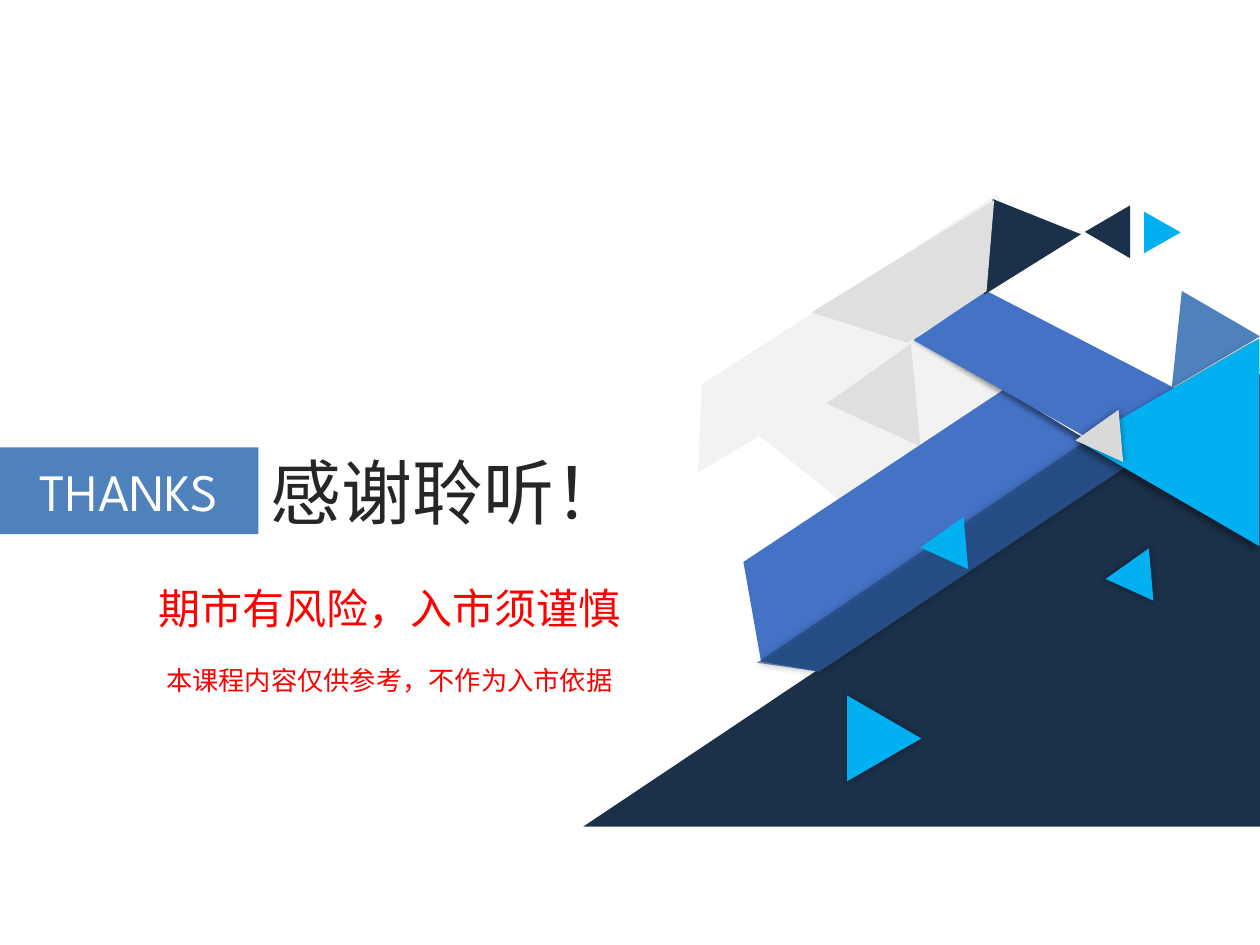
from lxml import etree
from pptx import Presentation
from pptx.dml.color import RGBColor
from pptx.enum.shapes import MSO_SHAPE
from pptx.enum.text import MSO_ANCHOR, MSO_AUTO_SIZE, PP_ALIGN
from pptx.oxml.ns import qn
from pptx.util import Inches, Pt

TRIANGLE = MSO_SHAPE.ISOSCELES_TRIANGLE
RIGHT_TRIANGLE = MSO_SHAPE.RIGHT_TRIANGLE
RECTANGLE = MSO_SHAPE.RECTANGLE
LEFT, CENTER = PP_ALIGN.LEFT, PP_ALIGN.CENTER
MIDDLE, TOP = MSO_ANCHOR.MIDDLE, MSO_ANCHOR.TOP
NO_FIT = MSO_AUTO_SIZE.NONE

LATIN_FONT = "League Spartan"
CHINESE_FONT = "Noto Sans CJK SC"
TILT = 144.7
SMALL = (0.42, 0.36)
SOFT = {"blur": 4, "distance": 0, "angle": 50}
COLORS = {
    "white": "FFFFFF", "pale": "F2F2F2", "silver": "DFDFDF", "gray": "D9D9D9",
    "navy": "1B3049", "cyan": "00B0F0", "blue": "4472C4", "steel": "4F81BD",
    "deep": "1F497D", "ink": "262626", "red": "FF0000", "black": "000000",
}


def add_alpha(color_element, percent):
    """Make a colour element partly transparent."""
    etree.SubElement(color_element, qn("a:alpha")).set("val", str(percent * 1000))


def add_shadow(shape, blur, distance, angle):
    """Give the shape an outer shadow, 40 percent black."""
    effects = shape._element.spPr.find(qn("a:effectLst"))
    shadow = etree.SubElement(effects, qn("a:outerShdw"))
    shadow.set("blurRad", str(Pt(blur)))
    shadow.set("dist", str(Pt(distance)))
    shadow.set("dir", str(angle * 60000))
    shadow.set("rotWithShape", "0")
    color = etree.SubElement(shadow, qn("a:srgbClr"))
    color.set("val", COLORS["black"])
    add_alpha(color, 40)


def paint(shape, color, opacity=100, shadow=None):
    """Set the fill, opacity and shadow of a shape without outline."""
    shape.shadow.inherit = False
    shape.fill.solid()
    shape.fill.fore_color.rgb = RGBColor.from_string(COLORS[color])
    shape.line.fill.background()
    if opacity < 100:
        add_alpha(shape._element.spPr.find(".//" + qn("a:srgbClr")), opacity)
    if shadow:
        add_shadow(shape, **shadow)


def add_preset(page, kind, left, top, size, color, rotation=0, **style):
    """Add a painted preset shape."""
    shape = page.shapes.add_shape(kind, Inches(left), Inches(top), *map(Inches, size))
    shape.rotation = rotation
    paint(shape, color, **style)
    return shape


def add_polygon(page, points, color, **style):
    """Add a painted polygon through points given in inches."""
    corners = [(Inches(x), Inches(y)) for x, y in points]
    builder = page.shapes.build_freeform(*corners[0])
    builder.add_line_segments(corners[1:], close=True)
    paint(builder.convert_to_shape(), color, **style)


def write(para, text, size, color, font=LATIN_FONT, align=LEFT, before=0):
    """Write one formatted paragraph."""
    para.alignment = align
    if before:
        para.space_before = Pt(before)
    span = para.add_run()
    span.text = text
    span.font.size = Pt(size)
    span.font.name = font
    span.font.color.rgb = RGBColor.from_string(COLORS[color])
    east_asian = etree.SubElement(span.font._element, qn("a:ea"))
    east_asian.set("typeface", CHINESE_FONT)


def add_artwork(page):
    """Add the folded ribbons and triangles from back to front."""
    add_polygon(page, [(6.73, 4.02), (6.03, 3.46), (5.54, 3.75), (5.57, 3.05),
                       (7.92, 1.54), (8.55, 2.8)], "pale")
    add_preset(page, TRIANGLE, 6.69, 2.9, (0.82, 0.71), "gray", TILT, opacity=73)
    ground = add_preset(page, RIGHT_TRIANGLE, 4.63, 2.97, (5.37, 3.59), "navy")
    ground._element.spPr.find(qn("a:xfrm")).set("flipH", "1")
    add_preset(page, TRIANGLE, 6.53, 5.48, (0.68, 0.59), "cyan", 330, shadow=SOFT)
    add_preset(page, TRIANGLE, 8.84, 4.44, SMALL, "cyan", TILT, shadow=SOFT)
    add_polygon(page, [(6.5, 5.33), (6.04, 5.25), (5.9, 4.46), (8.83, 2.52),
                       (9.19, 3.53)], "blue")
    add_polygon(page, [(6.5, 5.33), (6.01, 5.26), (9.09, 3.18), (9.19, 3.54)],
                "deep", opacity=66, shadow=SOFT)
    add_preset(page, TRIANGLE, 7.37, 4.19, SMALL, "cyan", TILT)
    add_polygon(page, [(7.28, 2.67), (8.61, 1.83), (9.98, 2.69), (8.61, 3.48)],
                "white", shadow={"blur": 3, "distance": 3, "angle": 135})
    add_polygon(page, [(8.62, 3.47), (7.25, 2.7), (7.83, 2.31), (9.34, 3.09)], "blue")
    add_polygon(page, [(9.3, 3.08), (9.38, 2.31), (10, 2.67)], "steel")
    add_preset(page, TRIANGLE, 8.46, 2.8, (1.65, 1.42), "cyan", 270,
               shadow={"blur": 4, "distance": 3, "angle": 135})
    add_preset(page, TRIANGLE, 8.6, 3.34, SMALL, "gray", TILT, shadow=SOFT)
    add_preset(page, TRIANGLE, 8.58, 1.66, SMALL, "navy", 270)
    add_preset(page, TRIANGLE, 9.06, 1.7, (0.33, 0.29), "cyan", 90)
    add_polygon(page, [(7.81, 2.34), (7.88, 1.58), (8.58, 1.86)], "navy")
    add_polygon(page, [(7.89, 1.59), (7.83, 2.31), (7.2, 2.72), (6.44, 2.48)], "silver")


def add_title(page):
    """Place and format the title placeholder."""
    title = page.shapes.title
    title.left, title.top = Inches(2.05), Inches(3.51)
    title.width, title.height = Inches(2.9), Inches(0.78)
    frame = title.text_frame
    frame.auto_size = NO_FIT
    frame.word_wrap = False
    frame.vertical_anchor = TOP
    write(frame.paragraphs[0], "感谢聆听！", 40.5, "ink")


def add_banner(page):
    """Add the banner at the left edge."""
    banner = add_preset(page, RECTANGLE, 0, 3.55, (2.05, 0.69), "steel")
    banner.text_frame.vertical_anchor = MIDDLE
    write(banner.text_frame.paragraphs[0], "THANKS", 30, "white", align=CENTER)


def add_notice(page):
    """Add the two-line risk notice."""
    box = page.shapes.add_textbox(Inches(0.67), Inches(4.57), Inches(4.84), Inches(1.01))
    frame = box.text_frame
    frame.word_wrap = True
    write(frame.paragraphs[0], "期市有风险，入市须谨慎", 24, "red",
          font=CHINESE_FONT, align=CENTER)
    write(frame.add_paragraph(), "本课程内容仅供参考，不作为入市依据", 15, "red",
          font=CHINESE_FONT, align=CENTER, before=18)


def main():
    """Build and save the closing slide."""
    deck = Presentation()
    deck.slide_width, deck.slide_height = Inches(10), Inches(7.5)
    page = deck.slides.add_slide(deck.slide_layouts.get_by_name("Title Only"))
    add_artwork(page)
    add_title(page)
    add_banner(page)
    add_notice(page)
    deck.save("out.pptx")


if __name__ == "__main__":
    main()
